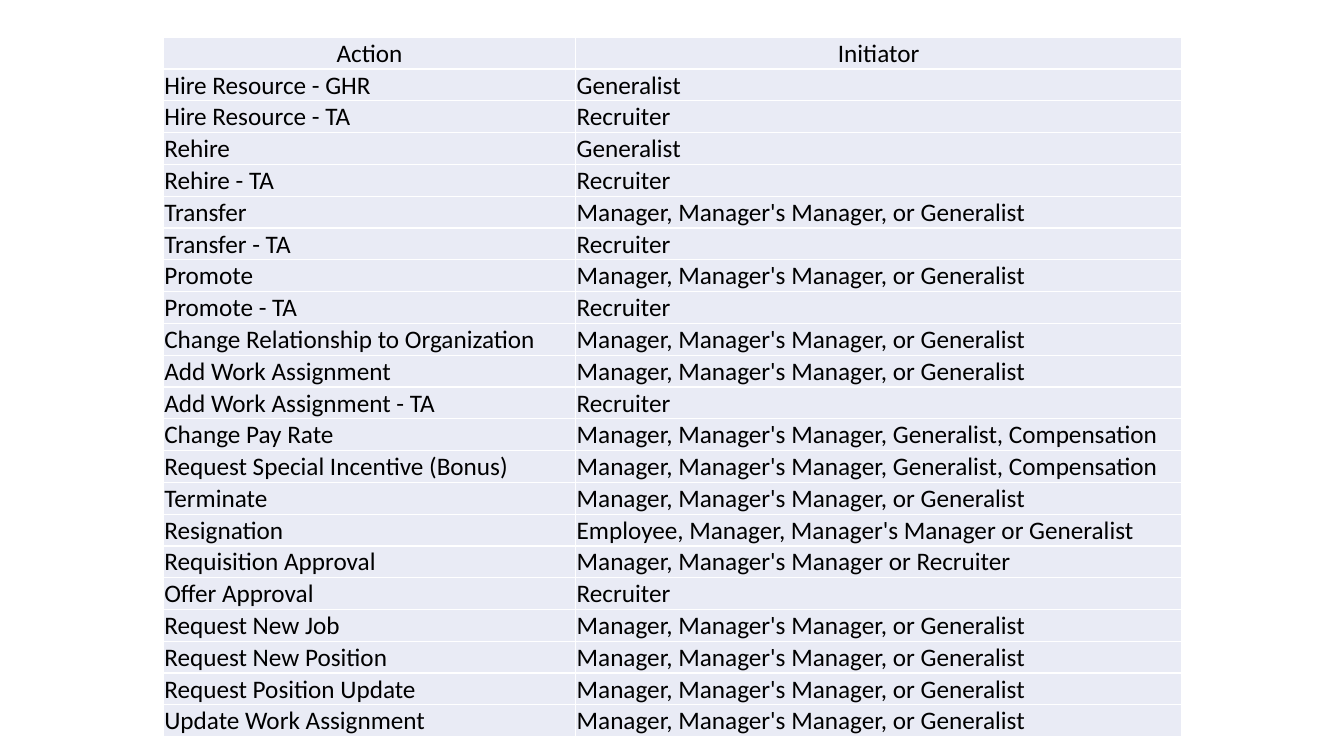
"""Build a slide with a table of HR actions and who initiates them."""
import lxml.etree
import pptx
import pptx.dml.color
import pptx.enum.text
import pptx.oxml.ns
import pptx.util

Inches = pptx.util.Inches
Pt = pptx.util.Pt
BLACK = pptx.dml.color.RGBColor(0x00, 0x00, 0x00)
WHITE = pptx.dml.color.RGBColor(0xFF, 0xFF, 0xFF)
PALE_BLUE = pptx.dml.color.RGBColor(0xE9, 0xEB, 0xF5)

MANAGERS = "Manager, Manager's Manager, or Generalist"
PAY_ROLES = "Manager, Manager's Manager, Generalist, Compensation"
INITIATORS = [
    ("Action", "Initiator"),
    ("Hire Resource - GHR", "Generalist"),
    ("Hire Resource - TA", "Recruiter"),
    ("Rehire", "Generalist"),
    ("Rehire - TA", "Recruiter"),
    ("Transfer", MANAGERS),
    ("Transfer - TA", "Recruiter"),
    ("Promote", MANAGERS),
    ("Promote - TA", "Recruiter"),
    ("Change Relationship to Organization", MANAGERS),
    ("Add Work Assignment", MANAGERS),
    ("Add Work Assignment - TA", "Recruiter"),
    ("Change Pay Rate", PAY_ROLES),
    ("Request Special Incentive (Bonus)", PAY_ROLES),
    ("Terminate", MANAGERS),
    ("Resignation", "Employee, Manager, Manager's Manager or Generalist"),
    ("Requisition Approval", "Manager, Manager's Manager or Recruiter"),
    ("Offer Approval", "Recruiter"),
    ("Request New Job", MANAGERS),
    ("Request New Position", MANAGERS),
    ("Request Position Update", MANAGERS),
    ("Update Work Assignment", MANAGERS),
]
CELL_FORMAT = {
    "margin_left": Inches(0.01),
    "margin_top": Inches(0.01),
    "margin_right": Inches(0.01),
    "margin_bottom": Inches(0),
    "vertical_anchor": pptx.enum.text.MSO_ANCHOR.BOTTOM,
}
FONT_FORMAT = {"name": "Calibri", "size": Pt(18), "bold": False}


def add_borders(cell):
    properties = cell._tc.get_or_add_tcPr()
    for side in ("a:lnL", "a:lnR", "a:lnT", "a:lnB"):
        border = lxml.etree.SubElement(properties, pptx.oxml.ns.qn(side), w=str(Pt(1)))
        fill = lxml.etree.SubElement(border, pptx.oxml.ns.qn("a:solidFill"))
        lxml.etree.SubElement(fill, pptx.oxml.ns.qn("a:srgbClr"), val=str(WHITE))


deck = pptx.Presentation()
deck.slide_width = Inches(13.33)
deck.slide_height = Inches(7.5)
slide = deck.slides.add_slide(deck.slide_layouts[6])

actions = slide.shapes.add_table(
    len(INITIATORS), 2, Inches(1.62), Inches(0.37), Inches(10.1), Inches(6.76)
).table
actions.first_row = False
actions.horz_banding = False
for column, width in zip(actions.columns, (4.09, 6.01)):
    column.width = Inches(width)

for row, entry in enumerate(INITIATORS):
    for column, wording in enumerate(entry):
        cell = actions.cell(row, column)
        for name, value in CELL_FORMAT.items():
            setattr(cell, name, value)
        add_borders(cell)
        cell.fill.solid()
        cell.fill.fore_color.rgb = PALE_BLUE
        paragraph = cell.text_frame.paragraphs[0]
        if row == 0:
            paragraph.alignment = pptx.enum.text.PP_ALIGN.CENTER
        else:
            paragraph.alignment = pptx.enum.text.PP_ALIGN.LEFT
        run = paragraph.add_run()
        run.text = wording
        for name, value in FONT_FORMAT.items():
            setattr(run.font, name, value)
        run.font.color.rgb = BLACK

deck.save("out.pptx")
